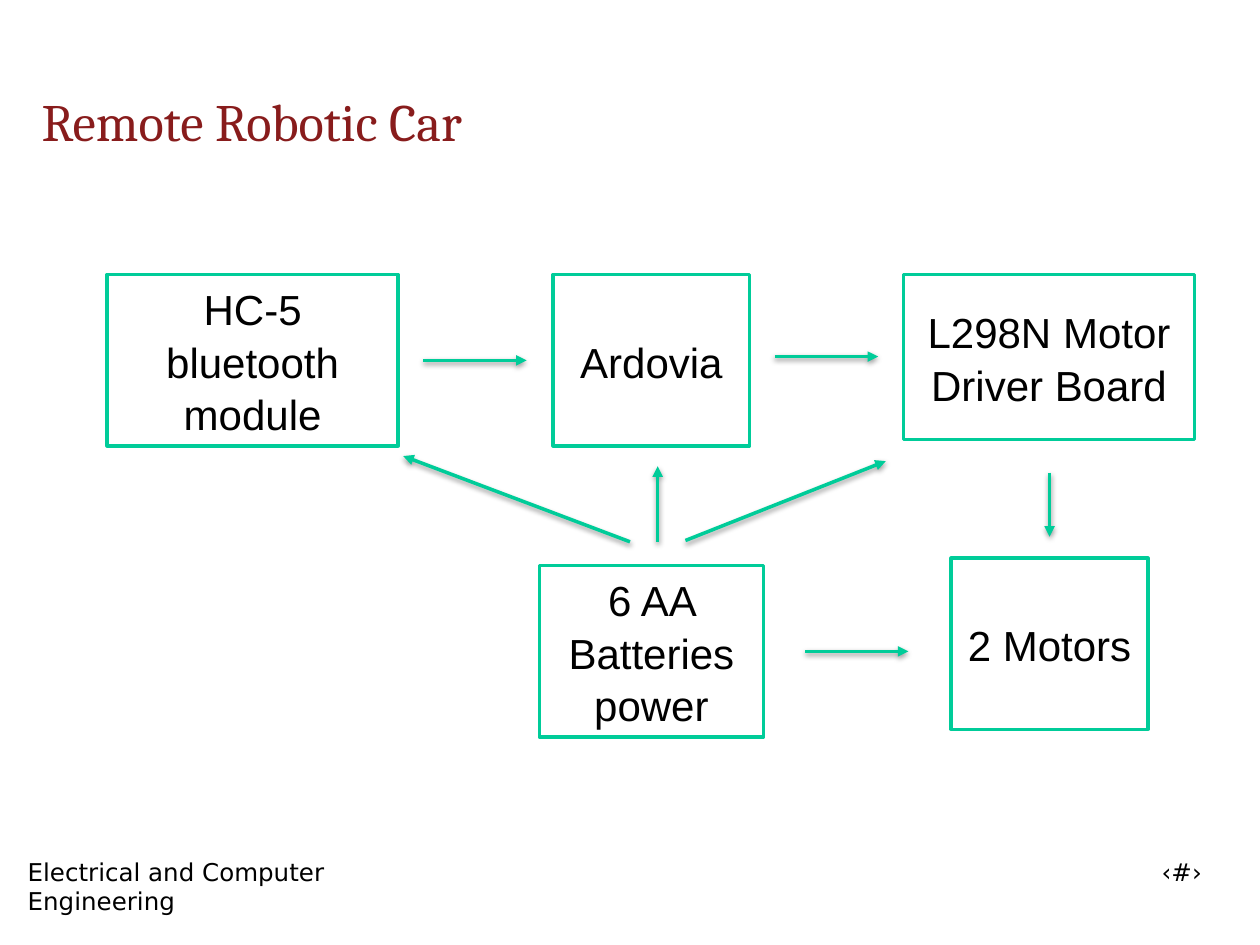
from lxml import etree
from pptx import Presentation
from pptx import util as u
from pptx.dml.color import RGBColor
from pptx.enum import shapes, text
from pptx.oxml import parse_xml
from pptx.oxml.ns import nsdecls, qn

HEX = {"title": "881C1C", "line": "00CC99", "fill": "FFFFFF", "text": "000000"}

NODES = [
    (0, 0, 2.31, 1.36, ["HC-5", "bluetooth module"]),
    (3.54, 0, 1.56, 1.36, ["Ardovia"]),
    (6.32, 0, 2.31, 1.31, ["L298N Motor Driver Board"]),
    (6.7, 2.25, 1.56, 1.36, ["2 Motors"]),
    (3.43, 2.31, 1.78, 1.36, ["6 AA Batteries power"]),
]
ARROWS = [
    (2.51, 0.68, 3.33, 0.68),
    (5.3, 0.65, 6.12, 0.65),
    (7.48, 1.57, 7.48, 2.08),
    (5.54, 2.99, 6.36, 2.99),
    (4.37, 2.12, 4.37, 1.52),
    (4.15, 2.12, 2.35, 1.44),
    (4.59, 2.11, 6.18, 1.48),
]
SHADOW = (
    f'<a:effectLst {nsdecls("a")}>'
    '<a:outerShdw blurRad="38100" dist="20000" dir="5400000" rotWithShape="0">'
    '<a:srgbClr val="000000"><a:alpha val="38000"/></a:srgbClr>'
    "</a:outerShdw></a:effectLst>"
)


def color(key):
    return RGBColor.from_string(HEX[key])


def style(para, name, size, key):
    para.font.name = name
    para.font.size = u.Pt(size)
    para.font.color.rgb = color(key)


def inset(frame, gap):
    frame.word_wrap = True
    frame.margin_left = frame.margin_right = u.Inches(gap)
    frame.margin_top = frame.margin_bottom = u.Inches(gap)


def outline(line):
    line.color.rgb = color("line")
    line.width = u.Pt(2)


def add_title(slide, box, words):
    title = slide.shapes.title
    title.left, title.top, title.width, title.height = map(u.Inches, box)
    frame = title.text_frame
    inset(frame, 0)
    frame.vertical_anchor = text.MSO_ANCHOR.MIDDLE
    frame.text = words
    para = frame.paragraphs[0]
    para.alignment = text.PP_ALIGN.LEFT
    style(para, "Cambria", 30, "title")


def add_note(slide, box, words):
    frame = slide.shapes.add_textbox(*map(u.Inches, box)).text_frame
    inset(frame, 0.05)
    frame.text = words
    style(frame.paragraphs[0], "DejaVu Sans", 14, "text")


def add_node(slide, box, lines):
    node = slide.shapes.add_shape(shapes.MSO_SHAPE.RECTANGLE, *map(u.Inches, box))
    node.shadow.inherit = False
    node.fill.solid()
    node.fill.fore_color.rgb = color("fill")
    outline(node.line)
    frame = node.text_frame
    inset(frame, 0)
    frame.vertical_anchor = text.MSO_ANCHOR.MIDDLE
    frame.text = "\n".join(lines)
    for para in frame.paragraphs:
        para.alignment = text.PP_ALIGN.CENTER
        para.line_spacing = 1.04
        style(para, "Arial", 24, "text")


def add_arrow(slide, ends):
    arrow = slide.shapes.add_connector(
        shapes.MSO_CONNECTOR.STRAIGHT, *map(u.Inches, ends))
    outline(arrow.line)
    props = arrow._element.spPr
    etree.SubElement(props.find(qn("a:ln")), qn("a:tailEnd"), type="triangle")
    props.append(parse_xml(SHADOW))


def add_chart(slide, left, top):
    for x, y, wide, high, lines in NODES:
        add_node(slide, (left + x, top + y, wide, high), lines)
    for x1, y1, x2, y2 in ARROWS:
        add_arrow(slide, (left + x1, top + y1, left + x2, top + y2))


def main():
    deck = Presentation()
    deck.slide_width, deck.slide_height = u.Inches(10), u.Inches(7.5)
    slide = deck.slides.add_slide(deck.slide_layouts[5])
    add_note(slide, (9.17, 6.75, 0.67, 0.34), "‹#›")
    add_note(slide, (0.17, 6.75, 3.6, 0.33), "Electrical and Computer Engineering")
    add_title(slide, (0.33, 0.67, 9.67, 0.58), "Remote Robotic Car")
    add_chart(slide, 0.85, 2.18)
    deck.save("out.pptx")


if __name__ == "__main__":
    main()
